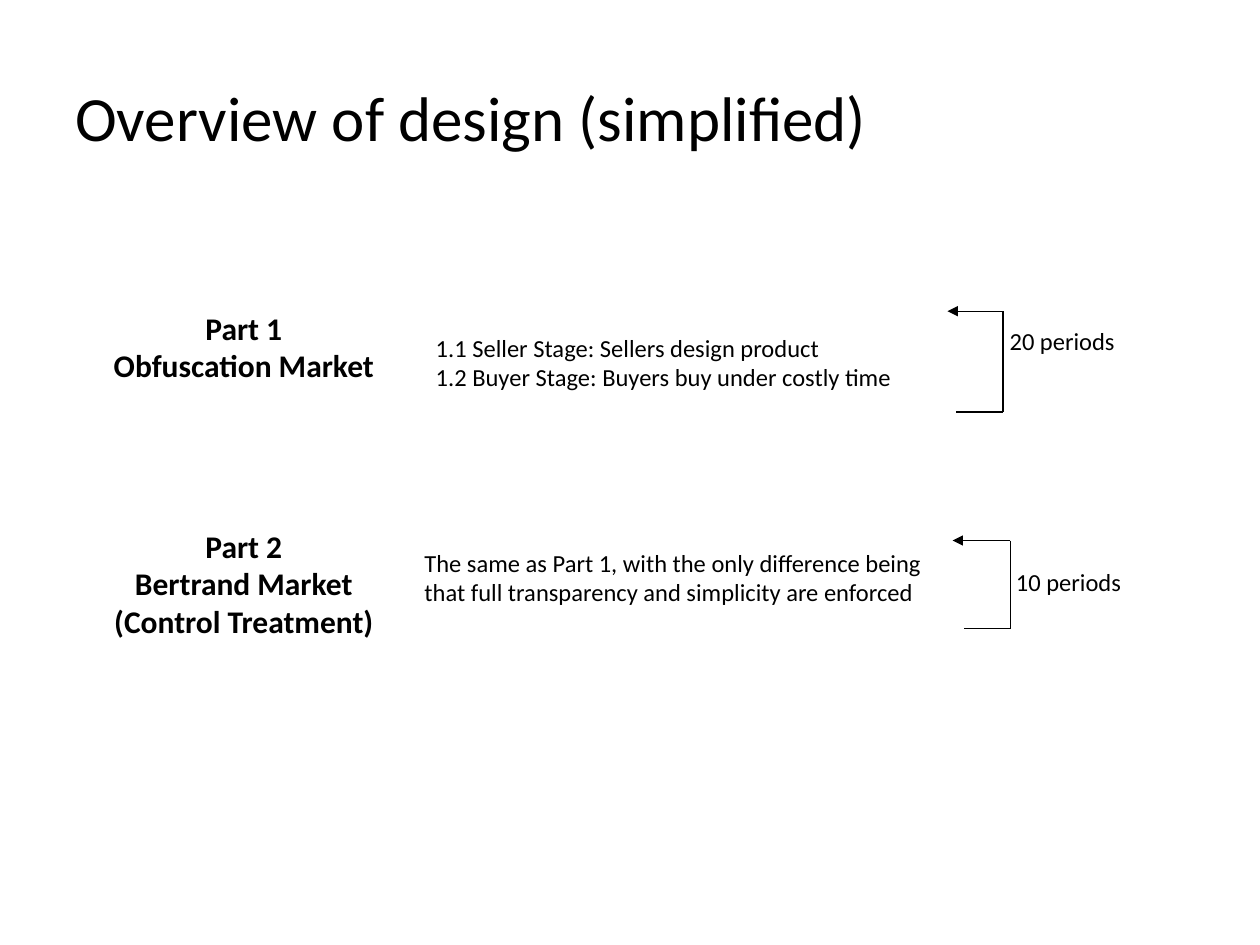
from pptx import Presentation
from pptx.dml.color import RGBColor
from pptx.enum.shapes import MSO_CONNECTOR as Connector
from pptx.enum.text import MSO_ANCHOR as Anchor, PP_ALIGN as Align
from pptx.oxml.ns import qn
from pptx.util import Inches, Pt
from lxml import etree

BLACK = "000000"

prs = Presentation()
prs.slide_width, prs.slide_height = Inches(10), Inches(7.5)
slide = prs.slides.add_slide(prs.slide_layouts[6])


def add_text(text, left, top, width, height, size=14, bold=False,
             align=Align.LEFT, anchor=Anchor.TOP, color=BLACK):
    box = slide.shapes.add_textbox(Inches(left), Inches(top), Inches(width), Inches(height))
    frame = box.text_frame
    frame.word_wrap = True
    frame.vertical_anchor = anchor
    frame.text = text
    for paragraph in frame.paragraphs:
        paragraph.alignment = align
        font = paragraph.runs[0].font
        font.name, font.size, font.bold = "Calibri", Pt(size), bold
        font.color.rgb = RGBColor.from_string(color)


def add_line(group, start, end, arrow=False, color=BLACK):
    points = [Inches(value) for value in (*start, *end)]
    line = group.shapes.add_connector(Connector.STRAIGHT, *points)
    line.line.color.rgb = RGBColor.from_string(color)
    line.line.width = Pt(0.75)
    if arrow:
        etree.SubElement(line.line._get_or_add_ln(), qn("a:tailEnd"), type="triangle")
    etree.SubElement(line._element.spPr, qn("a:effectLst"))


# Title
add_text("Overview of design (simplified)", 0.5, 0.3, 9, 1.25, size=36, anchor=Anchor.MIDDLE)

# Part names
for name, top, height in [
    ("Part 1\nObfuscation Market", 2.4, 0.71),
    ("Part 2\nBertrand Market\n(Control Treatment)", 4.13, 1.01),
]:
    add_text(name, 0.79, top, 2.29, height, size=18, bold=True, align=Align.CENTER)

# Stage descriptions
add_text("1.1 Seller Stage: Sellers design product\n"
         "1.2 Buyer Stage: Buyers buy under costly time", 3.36, 2.59, 4.19, 0.57)
add_text("The same as Part 1, with the only difference being that full transparency "
         "and simplicity are enforced", 3.27, 4.3, 4.42, 0.57)

# Repeat brackets with their number of periods
for periods, label_left, label_top, right, top, bottom, tip, foot in [
    ("20 periods", 7.77, 2.54, 7.96, 2.47, 3.27, 7.52, 7.59),
    ("10 periods", 7.82, 4.45, 8.02, 4.29, 4.99, 7.56, 7.65),
]:
    add_text(periods, label_left, label_top, 1.32, 0.34, align=Align.CENTER)
    bracket = slide.shapes.add_group_shape()
    add_line(bracket, (right, top), (tip, top), arrow=True)
    add_line(bracket, (right, bottom), (right, top))
    add_line(bracket, (right, bottom), (foot, bottom))

prs.save("out.pptx")
